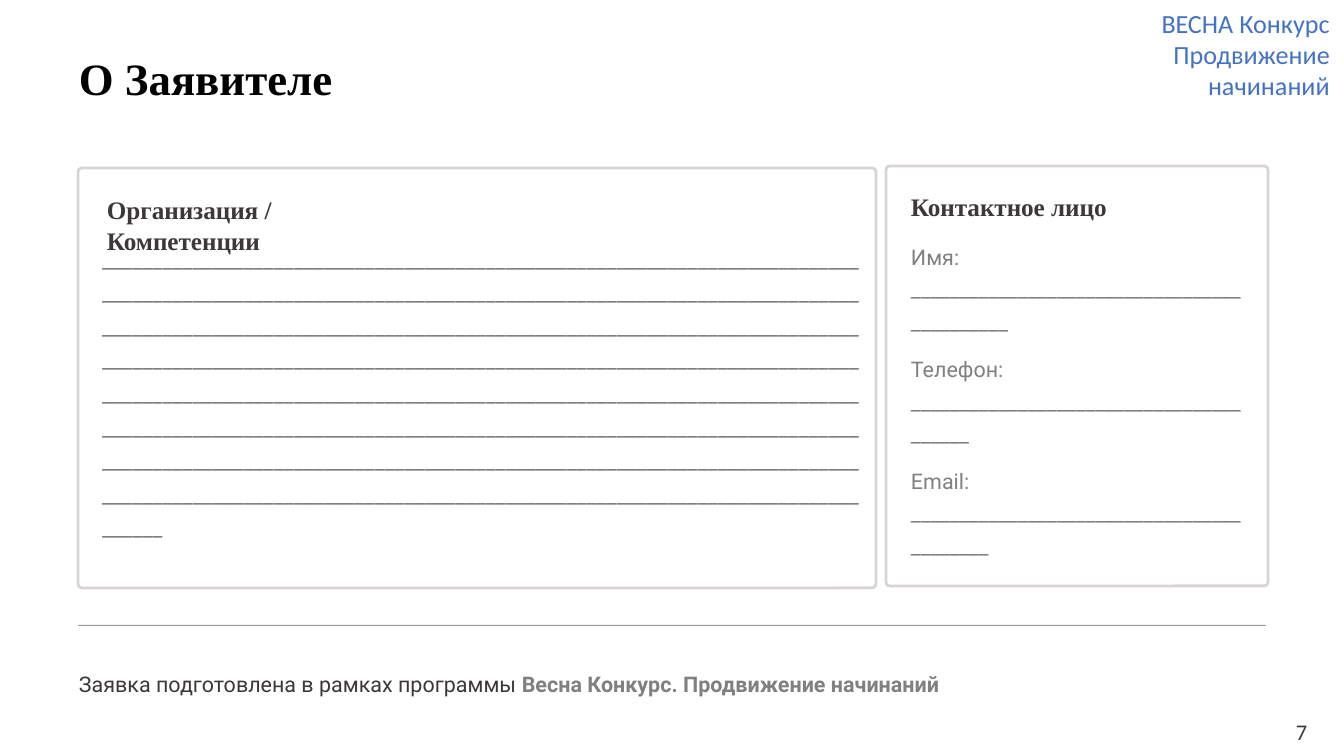
from pptx import Presentation
from pptx.dml.color import RGBColor
from pptx.enum.shapes import MSO_SHAPE
from pptx.enum.text import PP_ALIGN
from pptx.oxml.ns import qn
from pptx.util import Emu, Pt
from lxml import etree

ROUND_RECT, RECT = MSO_SHAPE.ROUNDED_RECTANGLE, MSO_SHAPE.RECTANGLE
RIGHT = PP_ALIGN.RIGHT
PX = 914400 / 134.4
SERIF, SANS, PLAIN = "Times New Roman", "Roboto", "Calibri"
DARK, GREY, BORDER, BLUE = "3D3838", "808080", "D8D4D4", "4472C4"

PROGRAMME = ["ВЕСНА Конкурс", "Продвижение начинаний"]
TITLE = "О Заявителе"
CARDS = [  # heading, card box, heading box
    ("Организация / Компетенции", (78, 168, 798, 420), (107, 194, 301, 32)),
    ("Контактное лицо", (886, 166, 382, 420), (911, 191, 254, 32)),
]
CONTACTS = [("Имя", 44), ("Телефон", 40), ("Email", 42)]  # label, blanks
CONTACT_TOP, CONTACT_STEP = 237, 112
ORGANISATION_BLANKS = 8 * 75 + 6
FOOTER = [("Заявка подготовлена в рамках программы ", DARK, False),
          ("Весна Конкурс. Продвижение начинаний", GREY, True)]
PAGE = "7"


def px(n):
    return Emu(round(n * PX))


def rgb(color):
    return RGBColor.from_string(color)


def add_box(s, kind, box, fill, line=None):
    sp = s.shapes.add_shape(kind, *map(px, box))
    sp.shadow.inherit = False
    sp.fill.solid()
    sp.fill.fore_color.rgb = rgb(fill)
    if line:
        sp.line.color.rgb = rgb(line)
        sp.line.width = Pt(1.5)
    else:
        sp.line.fill.background()
    return sp


def add_text(s, box, lines, font, size, color, bold=False, spacing=None,
             align=None, wrap=False, inset=0):
    """Add a text box; each line is a string or a list of (text, colour, bold)."""
    tf = s.shapes.add_textbox(*map(px, box)).text_frame
    tf.word_wrap = wrap
    tf.margin_left = tf.margin_right = px(2 * inset)
    tf.margin_top = tf.margin_bottom = px(inset)
    for i, line in enumerate(lines):
        p = tf.add_paragraph() if i else tf.paragraphs[0]
        p.font.name, p.font.size = font, Pt(size)
        if align is not None:
            p.alignment = align
        if spacing:
            p.line_spacing = Pt(spacing)
        runs = [(line, color, bold)] if isinstance(line, str) else line
        for text, run_color, run_bold in runs:
            r = p.add_run()
            r.text = text
            r.font.name, r.font.size = font, Pt(size)
            r.font.bold = run_bold
            r.font.color.rgb = rgb(run_color)


prs = Presentation()
prs.slide_width, prs.slide_height = px(1344), px(756)
s = prs.slides.add_slide(prs.slide_layouts[6])
s.background.fill.solid()
s.background.fill.fore_color.rgb = rgb("FFFFFF")

add_text(s, (1039, 0, 305, 77), PROGRAMME, PLAIN, 14, BLUE, align=RIGHT, inset=7)
add_text(s, (79, 42, 489, 62), [TITLE], SERIF, 24, "000000", True, 33.5)

for heading, card, heading_box in CARDS:
    add_box(s, ROUND_RECT, card, "FFFFFF", BORDER).adjustments[0] = 0.01
    add_text(s, heading_box, [heading], SERIF, 13.5, DARK, True, 16.5)

add_text(s, (102, 239, 758, 323), ["_" * ORGANISATION_BLANKS], SANS, 12, GREY,
         spacing=18, wrap=True)
for i, (label, blanks) in enumerate(CONTACTS):
    add_text(s, (911, CONTACT_TOP + i * CONTACT_STEP, 331, 99),
             [f"{label}: {'_' * blanks}"], SANS, 11.5, GREY, spacing=17.5, wrap=True)

rule = add_box(s, RECT, (78, 625, 1188, 1), DARK)
rule_color = rule.fill._xPr.find(qn("a:solidFill"))[0]
etree.SubElement(rule_color, qn("a:alpha")).set("val", "50000")

add_text(s, (79, 664, 1188, 34), [FOOTER], SANS, 11.5, DARK, spacing=17.5)
add_text(s, (1282, 711, 73, 60), [PAGE], PLAIN, 12, "3B3838", wrap=True, inset=7)

prs.save("out.pptx")
